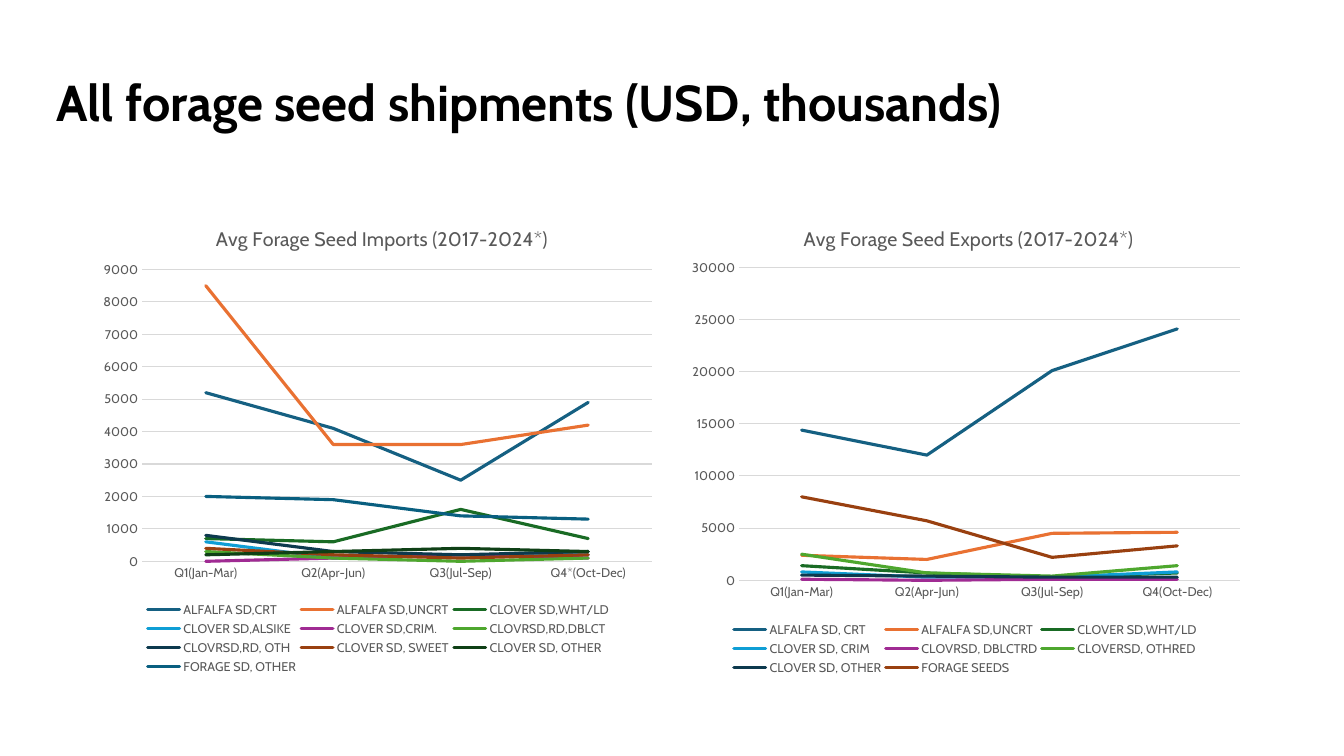
from dataclasses import dataclass

import lxml.etree
import pptx
import pptx.chart.data
import pptx.dml.color
import pptx.enum.chart
import pptx.enum.text
import pptx.oxml.ns
import pptx.util

Pt = pptx.util.Pt
FONT = "Cabin"
COLORS = {
    "black": "000000",
    "label": "595959",
    "grid": "D9D9D9",
}
SERIES_COLORS = {
    "blue": "156082",
    "orange": "E97132",
    "green": "196B24",
    "sky": "0F9ED5",
    "purple": "A02B93",
    "lime": "4EA72E",
    "navy": "0D3A4E",
    "brown": "994010",
    "forest": "0F4016",
    "teal": "095F80",
}


@dataclass
class Box:
    left: float
    top: float
    width: float
    height: float


@dataclass
class ShipmentChart:
    title: str
    box: Box
    plot: Box  # plot and legend are measured from the chart's corner
    legend: Box
    maximum: int
    step: int
    quarters: list[str]
    seeds: dict[str, tuple[int, ...]]


CHART_TOP, CHART_WIDTH, CHART_HEIGHT = 144, 408.24, 342.72
TITLE_LEFT, TITLE_TOP = 85.5, 14

CHARTS = [
    ShipmentChart(
        "Avg Forage Seed Imports (2017-2024*)",
        Box(66.24, CHART_TOP, CHART_WIDTH, CHART_HEIGHT),
        Box(35.2, 48.5, 364.3, 208.5),
        Box(35.5, 283.5, 337, 57),
        9000,
        1000,
        ["Q1(Jan-Mar)", "Q2(Apr-Jun)", "Q3(Jul-Sep)", "Q4*(Oct-Dec)"],
        {
            "ALFALFA SD,CRT": (5200, 4100, 2500, 4900),
            "ALFALFA SD,UNCRT": (8500, 3600, 3600, 4200),
            "CLOVER SD,WHT/LD": (700, 600, 1600, 700),
            "CLOVER SD,ALSIKE": (600, 100, 200, 200),
            "CLOVER SD,CRIM.": (0, 100, 200, 100),
            "CLOVRSD,RD,DBLCT": (300, 100, 0, 100),
            "CLOVRSD,RD, OTH": (800, 300, 200, 300),
            "CLOVER SD, SWEET": (400, 200, 100, 200),
            "CLOVER SD, OTHER": (200, 300, 400, 300),
            "FORAGE SD, OTHER": (2000, 1900, 1400, 1300),
        },
    ),
    ShipmentChart(
        "Avg Forage Seed Exports (2017-2024*)",
        Box(486, CHART_TOP, CHART_WIDTH, CHART_HEIGHT),
        Box(41.9, 47, 357.8, 223.6),
        Box(35, 298, 337, 43),
        30000,
        5000,
        ["Q1(Jan-Mar)", "Q2(Apr-Jun)", "Q3(Jul-Sep)", "Q4(Oct-Dec)"],
        {
            "ALFALFA SD, CRT": (14400, 12000, 20100, 24100),
            "ALFALFA SD,UNCRT": (2400, 2000, 4500, 4600),
            "CLOVER SD,WHT/LD": (1400, 700, 300, 700),
            "CLOVER SD, CRIM": (800, 300, 300, 800),
            "CLOVRSD, DBLCTRD": (100, 0, 100, 100),
            "CLOVERSD, OTHRED": (2500, 700, 400, 1400),
            "CLOVER SD, OTHER": (500, 400, 300, 300),
            "FORAGE SEEDS": (8000, 5700, 2200, 3300),
        },
    ),
]


def rgb(color: str) -> pptx.dml.color.RGBColor:
    return pptx.dml.color.RGBColor.from_string(color)


def style_font(font, *, size: float, color: str, bold: bool = False) -> None:
    font.name, font.size, font.bold = FONT, Pt(size), bold
    font.color.rgb = rgb(color)


def style_line(line, color: str, width: float) -> None:
    line.color.rgb = rgb(color)
    line.width = Pt(width)


def write_text(text_frame, text: str, *, size: float, color: str,
               bold: bool = False, line_spacing: float | None = None) -> None:
    paragraph = text_frame.paragraphs[0]
    paragraph.line_spacing = line_spacing
    run = paragraph.add_run()
    run.text = text
    style_font(run.font, size=size, color=color, bold=bold)


def set_layout(parent, index: int, left: float, top: float,
               width: float | None = None, height: float | None = None) -> None:
    """Place a chart part, in points from the chart's top left corner."""
    qn = pptx.oxml.ns.qn
    for old_layout in parent.findall(qn("c:layout")):
        parent.remove(old_layout)
    settings = {"xMode": "edge", "yMode": "edge",
                "x": left / CHART_WIDTH, "y": top / CHART_HEIGHT}
    if width is not None and height is not None:
        settings |= {"w": width / CHART_WIDTH, "h": height / CHART_HEIGHT}
    if parent.tag == qn("c:plotArea"):
        settings = {"layoutTarget": "inner"} | settings
    layout = lxml.etree.Element(qn("c:layout"))
    manual = lxml.etree.SubElement(layout, qn("c:manualLayout"))
    for name, value in settings.items():
        lxml.etree.SubElement(manual, qn(f"c:{name}")).set("val", str(value))
    parent.insert(index, layout)


def add_shipment_chart(slide, item: ShipmentChart) -> None:
    data = pptx.chart.data.CategoryChartData()
    data.categories = item.quarters
    for name, values in item.seeds.items():
        data.add_series(name, values)
    box = item.box
    chart = slide.shapes.add_chart(
        pptx.enum.chart.XL_CHART_TYPE.LINE, Pt(box.left), Pt(box.top),
        Pt(box.width), Pt(box.height), data).chart
    style_font(chart.font, size=10, color=COLORS["black"])

    # Title and legend
    chart.has_title = True
    write_text(chart.chart_title.text_frame, item.title,
               size=14, color=COLORS["label"])
    chart.has_legend = True
    chart.legend.position = pptx.enum.chart.XL_LEGEND_POSITION.BOTTOM
    chart.legend.include_in_layout = False
    style_font(chart.legend.font, size=9, color=COLORS["label"])

    # Axes
    for axis in (chart.category_axis, chart.value_axis):
        axis.major_tick_mark = pptx.enum.chart.XL_TICK_MARK.NONE
        axis.minor_tick_mark = pptx.enum.chart.XL_TICK_MARK.NONE
        style_font(axis.tick_labels.font, size=9, color=COLORS["label"])
    style_line(chart.category_axis.format.line, COLORS["grid"], 0.75)
    values = chart.value_axis
    values.minimum_scale, values.maximum_scale = 0, item.maximum
    values.major_unit = item.step
    values.format.line.fill.background()
    style_line(values.major_gridlines.format.line, COLORS["grid"], 0.75)

    # Series lines with round ends
    chart.plots[0].vary_by_categories = False
    for series, color in zip(chart.plots[0].series, SERIES_COLORS.values()):
        series.smooth = False
        style_line(series.format.line, color, 2.25)
    for line in chart.element.xpath(".//c:ser/c:spPr/a:ln"):
        line.set("cap", "rnd")

    # Places of the chart parts
    title, plot, legend = (chart.element.xpath(f"c:chart/c:{part}")[0]
                           for part in ("title", "plotArea", "legend"))
    set_layout(title, 1, TITLE_LEFT, TITLE_TOP)
    for part, index, place in ((plot, 0, item.plot), (legend, 1, item.legend)):
        set_layout(part, index, place.left, place.top, place.width, place.height)


def main() -> None:
    presentation = pptx.Presentation()
    presentation.slide_width, presentation.slide_height = Pt(960), Pt(540)
    slide = presentation.slides.add_slide(presentation.slide_layouts[6])

    # Heading
    heading = slide.shapes.add_textbox(Pt(33.12), Pt(23.04), Pt(828), Pt(104.4))
    heading.text_frame.word_wrap = True
    heading.text_frame.vertical_anchor = pptx.enum.text.MSO_ANCHOR.MIDDLE
    write_text(heading.text_frame, "All forage seed shipments (USD, thousands)",
               size=36, color=COLORS["black"], bold=True, line_spacing=0.9)

    for item in CHARTS:
        add_shipment_chart(slide, item)
    presentation.save("out.pptx")


if __name__ == "__main__":
    main()
